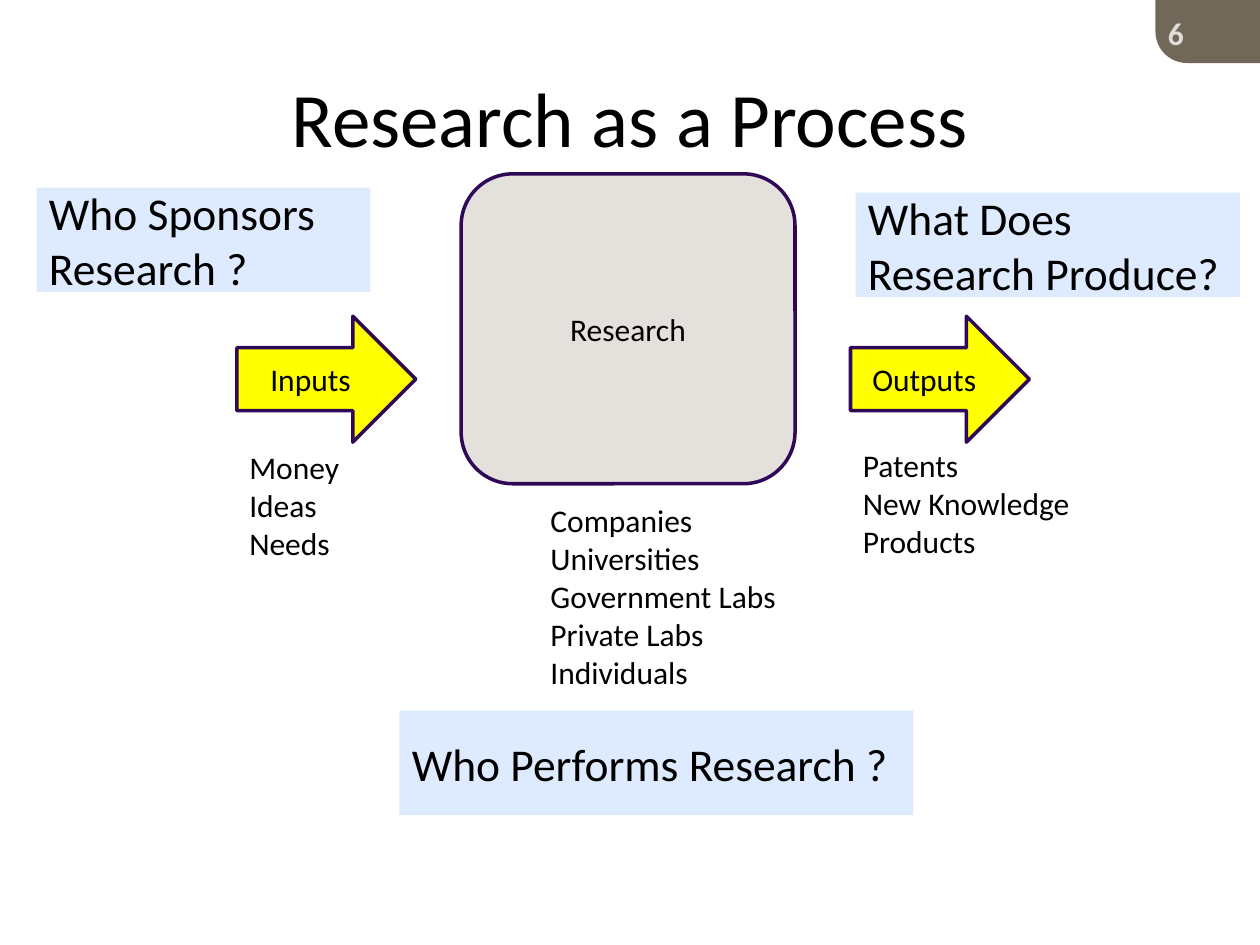
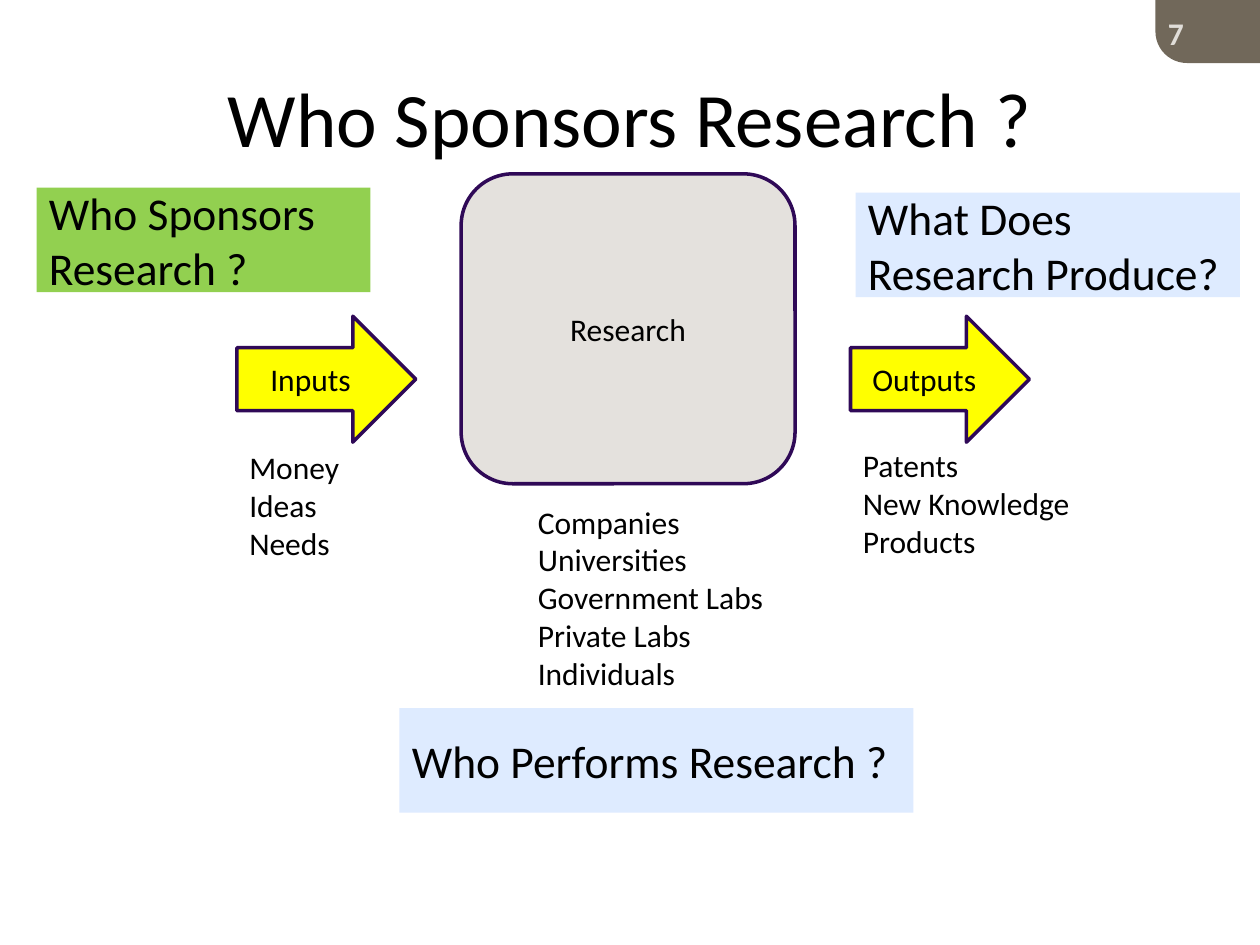
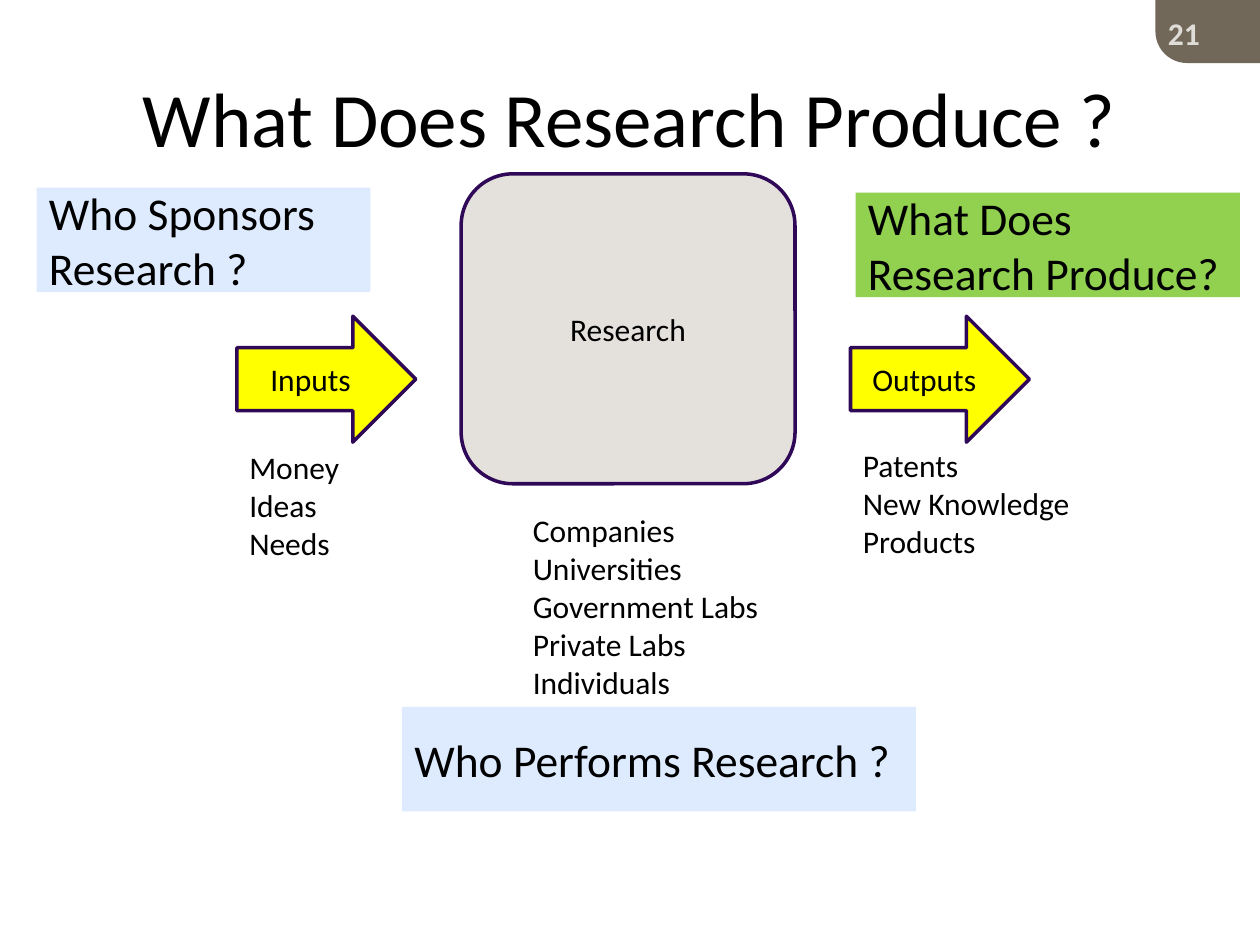
from dataclasses import dataclass

from pptx import Presentation
from pptx.dml.color import RGBColor
from pptx.enum.shapes import MSO_SHAPE
from pptx.enum.text import MSO_ANCHOR, MSO_AUTO_SIZE, PP_ALIGN
from pptx.util import Inches, Pt


@dataclass(frozen=True)
class Theme:
    font: str = "Calibri"
    title_size: int = 44
    question_size: int = 26
    body_size: int = 18
    outline_width: int = 2
    text: str = "000000"
    tab: str = "71685A"
    tab_text: str = "E0DDD8"
    process: str = "E4E1DD"
    outline: str = "2F0957"
    arrow: str = "FFFF00"
    question: str = "DEEBFF"
    highlight: str = "92D050"


@dataclass(frozen=True)
class Box:
    left: float
    top: float
    width: float
    height: float

    def inner(self, left, top, width, height):
        return Box(self.left + left, self.top + top, width, height)

    def lengths(self):
        return [Inches(n) for n in (self.left, self.top, self.width, self.height)]


@dataclass(frozen=True)
class Stage:
    """One side of the process; insets and drops are measured from its box."""
    box: Box
    question: str
    question_inset: float
    question_width: float
    arrow: str
    arrow_inset: float
    arrow_drop: float
    items: tuple
    items_drop: float
    items_width: float


@dataclass(frozen=True)
class ProcessSlide:
    number: int
    title: str
    performers: Box
    performers_question: Box
    highlighted: str = ""


THEME = Theme()
QUESTION_HEIGHT = 0.83
TITLE_BOX = Box(0.5, 0.3, 9, 1.25)
TAB_BOX = Box(9.17, 0, 0.83, 0.5)
PROCESS_BOX = Box(3.66, 1.38, 2.65, 2.46)

WHO_SPONSORS = "Who Sponsors Research ?"
WHAT_PRODUCED = "What Does Research Produce?"
WHO_PERFORMS = "Who Performs Research ?"
PERFORMERS = ("Companies", "Universities", "Government Labs", "Private Labs", "Individuals")

STAGES = (
    Stage(Box(0.29, 1.49, 3.01, 3.03), WHO_SPONSORS, 0, 2.65,
          "Inputs", 1.59, 1.02, ("Money", "Ideas", "Needs"), 2.02, 0.92),
    Stage(Box(6.75, 1.53, 3.09, 2.97), WHAT_PRODUCED, 0.04, 3.05,
          "Outputs", 0, 0.98, ("Patents", "New Knowledge", "Products"), 1.96, 1.91),
)

SLIDES = (
    ProcessSlide(6, "Research as a Process",
                 Box(4.27, 3.93, 2.02, 1.62), Box(3.17, 5.64, 4.08, QUESTION_HEIGHT)),
    ProcessSlide(7, "Who Sponsors Research ?",
                 Box(4.17, 3.94, 2.02, 1.62), Box(3.17, 5.62, 4.08, QUESTION_HEIGHT),
                 WHO_SPONSORS),
    ProcessSlide(21, "What Does Research Produce ?",
                 Box(4.13, 4.01, 2.02, 1.62), Box(3.19, 5.61, 4.08, QUESTION_HEIGHT),
                 WHAT_PRODUCED),
)


def write_lines(frame, lines, size, align=PP_ALIGN.LEFT, color=THEME.text, bold=False):
    for index, line in enumerate(lines):
        paragraph = frame.add_paragraph() if index else frame.paragraphs[0]
        paragraph.alignment = align
        run = paragraph.add_run()
        run.text = line
        run.font.name = THEME.font
        run.font.size = Pt(size)
        run.font.bold = bold
        run.font.color.rgb = RGBColor.from_string(color)


def add_filled_shape(slide, kind, box, fill, outlined=False):
    shape = slide.shapes.add_shape(kind, *box.lengths())
    shape.shadow.inherit = False
    shape.fill.solid()
    shape.fill.fore_color.rgb = RGBColor.from_string(fill)
    if outlined:
        shape.line.color.rgb = RGBColor.from_string(THEME.outline)
        shape.line.width = Pt(THEME.outline_width)
    else:
        shape.line.fill.background()
    shape.text_frame.word_wrap = True
    shape.text_frame.vertical_anchor = MSO_ANCHOR.MIDDLE
    return shape


def add_outlined_label(slide, kind, box, fill, label):
    shape = add_filled_shape(slide, kind, box, fill, outlined=True)
    write_lines(shape.text_frame, [label], THEME.body_size, PP_ALIGN.CENTER)


def add_question(slide, box, question, highlighted):
    fill = THEME.highlight if question == highlighted else THEME.question
    shape = add_filled_shape(slide, MSO_SHAPE.RECTANGLE, box, fill)
    write_lines(shape.text_frame, [question], THEME.question_size)


def add_list(slide, box, items):
    frame = slide.shapes.add_textbox(*box.lengths()).text_frame
    frame.word_wrap = False
    frame.auto_size = MSO_AUTO_SIZE.SHAPE_TO_FIT_TEXT
    write_lines(frame, items, THEME.body_size)


def add_number_tab(slide, box, number):
    tab = add_filled_shape(slide, MSO_SHAPE.ROUND_1_RECTANGLE, box, THEME.tab)
    tab.adjustments[0] = 0.5
    tab.rotation = 180
    number_box = box.inner(0, 0.06, 0.58, 0.4)
    frame = slide.shapes.add_textbox(*number_box.lengths()).text_frame
    frame.word_wrap = True
    write_lines(frame, [str(number)], THEME.body_size, color=THEME.tab_text, bold=True)


def add_title(slide, box, title):
    frame = slide.shapes.add_textbox(*box.lengths()).text_frame
    frame.word_wrap = True
    frame.vertical_anchor = MSO_ANCHOR.MIDDLE
    write_lines(frame, [title], THEME.title_size, PP_ALIGN.CENTER)


def add_stage(slide, stage, highlighted):
    """Place a question, its arrow and the list under the arrow."""
    box = stage.box
    question_box = box.inner(stage.question_inset, 0, stage.question_width, QUESTION_HEIGHT)
    arrow_box = box.inner(stage.arrow_inset, stage.arrow_drop, 1.42, 1)
    items_box = box.inner(stage.arrow_inset, stage.items_drop, stage.items_width, 1.01)
    add_question(slide, question_box, stage.question, highlighted)
    add_outlined_label(slide, MSO_SHAPE.RIGHT_ARROW, arrow_box, THEME.arrow, stage.arrow)
    add_list(slide, items_box, stage.items)


def build_process_slide(presentation, content):
    slide = presentation.slides.add_slide(presentation.slide_layouts[6])
    add_number_tab(slide, TAB_BOX, content.number)
    add_title(slide, TITLE_BOX, content.title)
    for stage in STAGES:
        add_stage(slide, stage, content.highlighted)
    add_list(slide, content.performers, PERFORMERS)
    add_question(slide, content.performers_question, WHO_PERFORMS, content.highlighted)
    add_outlined_label(slide, MSO_SHAPE.ROUNDED_RECTANGLE, PROCESS_BOX, THEME.process, "Research")


def main():
    presentation = Presentation()
    presentation.slide_width = Inches(10)
    presentation.slide_height = Inches(7.5)
    for content in SLIDES:
        build_process_slide(presentation, content)
    presentation.save("out.pptx")


if __name__ == "__main__":
    main()
